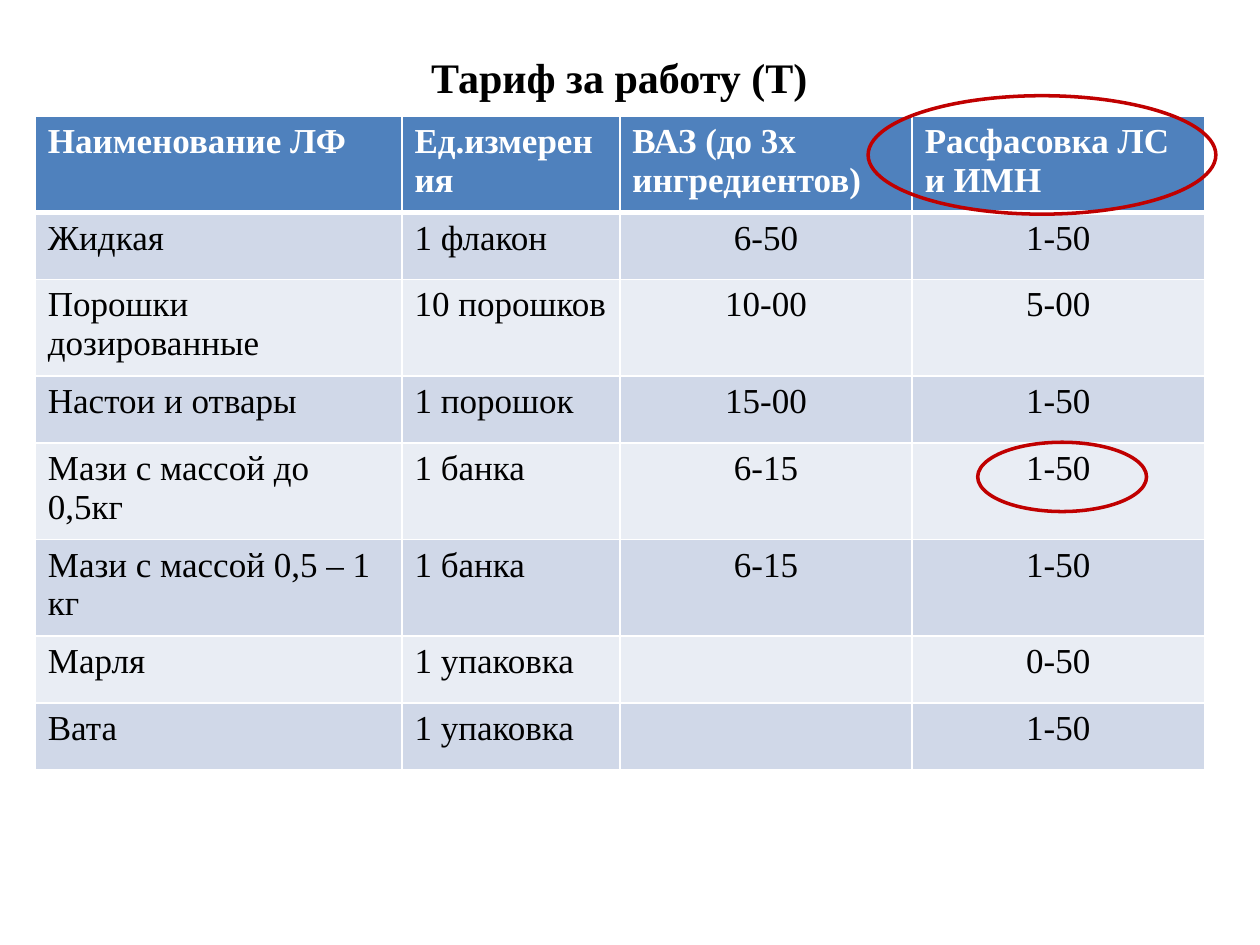
from lxml import etree
from pptx import Presentation
from pptx.dml.color import RGBColor
from pptx.enum import shapes, text
from pptx.oxml import ns
from pptx.util import Inches, Pt

COLORS = {"header": "4F81BD", "odd": "D0D8E8", "even": "E9EDF4",
          "white": "FFFFFF", "black": "000000", "mark": "C00000"}
FONT = "Times New Roman"


def style_text(p, size, color, bold, align):
    p.alignment = align
    for r in p.runs:
        r.font.name = FONT
        r.font.size = Pt(size)
        r.font.bold = bold
        r.font.color.rgb = RGBColor.from_string(COLORS[color])


def add_borders(cell, widths):
    tcPr = cell._tc.get_or_add_tcPr()
    for i, (side, width) in enumerate(widths.items()):
        ln = etree.Element(ns.qn("a:ln" + side), w=str(Pt(width)))
        fill = etree.SubElement(ln, ns.qn("a:solidFill"))
        etree.SubElement(fill, ns.qn("a:srgbClr"), val=COLORS["white"])
        tcPr.insert(i, ln)


prs = Presentation()
prs.slide_width, prs.slide_height = Inches(10), Inches(7.5)
s = prs.slides.add_slide(prs.slide_layouts[6])

# Title
sp = s.shapes.add_textbox(Inches(0.35), Inches(0.36), Inches(9.13), Inches(0.5))
tf = sp.text_frame
tf.word_wrap = True
tf.auto_size = text.MSO_AUTO_SIZE.SHAPE_TO_FIT_TEXT
tf.text = "Тариф за работу (Т)"
style_text(tf.paragraphs[0], 24, "black", True, text.PP_ALIGN.CENTER)

# Tariff table
rows = [
    ("Наименование ЛФ", "Ед.измерения", "ВАЗ (до 3х ингредиентов)", "Расфасовка ЛС и ИМН"),
    ("Жидкая", "1 флакон", "6-50", "1-50"),
    ("Порошки дозированные", "10 порошков", "10-00", "5-00"),
    ("Настои и отвары", "1 порошок", "15-00", "1-50"),
    ("Мази с массой до 0,5кг", "1 банка", "6-15", "1-50"),
    ("Мази с массой 0,5 – 1 кг", "1 банка", "6-15", "1-50"),
    ("Марля", "1 упаковка", "", "0-50"),
    ("Вата", "1 упаковка", "", "1-50"),
]
col_widths = [2.91, 1.73, 2.32, 2.32]
row_height = 0.53
table = s.shapes.add_table(len(rows), len(col_widths), Inches(0.28), Inches(0.92),
                           Inches(sum(col_widths)), Inches(row_height * len(rows))).table
for col, width in zip(table.columns, col_widths):
    col.width = Inches(width)
for i, row in enumerate(rows):
    table.rows[i].height = Inches(row_height)
    header = i == 0
    band = "header" if header else "odd" if i % 2 else "even"
    for j, value in enumerate(row):
        cell = table.cell(i, j)
        cell.text = value
        cell.fill.solid()
        cell.fill.fore_color.rgb = RGBColor.from_string(COLORS[band])
        centered = not header and j >= 2
        style_text(cell.text_frame.paragraphs[0], 20, "white" if header else "black", header,
                   text.PP_ALIGN.CENTER if centered else text.PP_ALIGN.LEFT)
        add_borders(cell, {"L": 1, "R": 1, "T": 3 if i == 1 else 1, "B": 3 if header else 1})

# Ellipses marking the packaging column and its ointment rate
for box in [(6.89, 0.76, 2.76, 0.94), (7.76, 3.51, 1.34, 0.55)]:
    sp = s.shapes.add_shape(shapes.MSO_SHAPE.OVAL, *map(Inches, box))
    sp.shadow.inherit = False
    sp.fill.background()
    sp.line.color.rgb = RGBColor.from_string(COLORS["mark"])
    sp.line.width = Pt(2)

prs.save("out.pptx")
